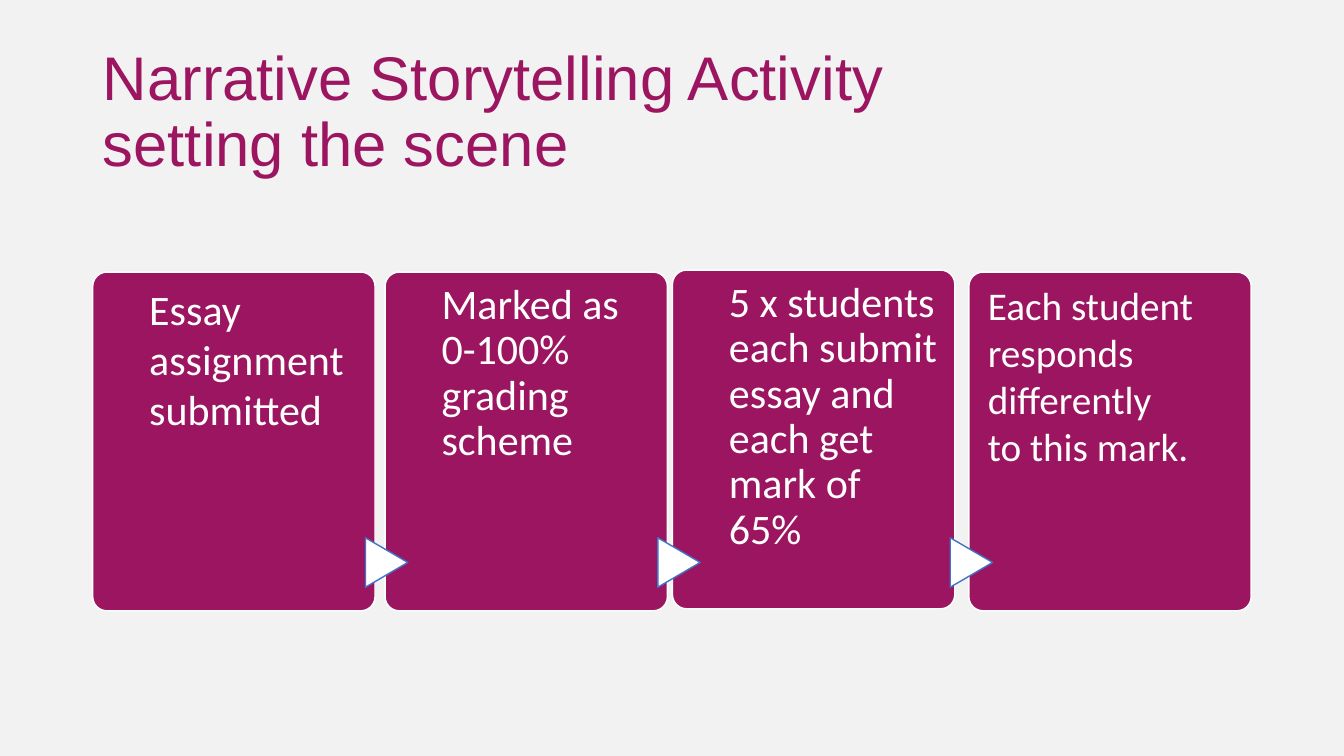
from pptx import Presentation
from pptx.dml.color import RGBColor
from pptx.enum.shapes import MSO_SHAPE as Shape
from pptx.enum.text import MSO_ANCHOR as Anchor, MSO_AUTO_SIZE as AutoSize, PP_ALIGN as Align
from pptx.util import Inches, Pt

PLUM, WHITE, PAPER, BLUE = "9C1560", "FFFFFF", "F2F2F2", "4472C4"
MARGIN = 0.92
CARD_WIDTH, CARD_HEIGHT = 2.8, 3.36
ARROW_LEFT, ARROW_TOP, ARROW_PITCH = 3.59, 5.37, 2.9
STEPS = [
    (0.92, 2.7, ["Essay", "assignment submitted"], 1.0),
    (3.82, 2.7, ["Marked as 0-100% grading scheme"], 0.9),
    (6.67, 2.68, ["5 x students each submit essay and each get mark of 65%"], 0.9),
]
RESPONSE = ["Each student", "responds", "differently", "to this mark."]


def color(value):
    return RGBColor.from_string(value)


def box(left, top, width, height):
    return [Inches(length) for length in (left, top, width, height)]


def write(frame, paragraphs, size, font="Calibri", fill=WHITE, spacing=1.0,
          anchor=Anchor.TOP, insets=(0.1, 0.05, 0.1, 0.05), wrap=True):
    frame.word_wrap = wrap
    frame.auto_size = AutoSize.NONE if wrap else AutoSize.SHAPE_TO_FIT_TEXT
    frame.vertical_anchor = anchor
    (frame.margin_left, frame.margin_top,
     frame.margin_right, frame.margin_bottom) = box(*insets)
    for index, words in enumerate(paragraphs):
        paragraph = frame.add_paragraph() if index else frame.paragraphs[0]
        paragraph.text = words
        paragraph.alignment = Align.LEFT
        paragraph.line_spacing = spacing
        for run in paragraph.runs:
            run.font.name = font
            run.font.size = Pt(size)
            run.font.color.rgb = color(fill)


def draw(slide, kind, area, fill, line):
    shape = slide.shapes.add_shape(kind, *box(*area))
    shape.shadow.inherit = False
    shape.fill.solid()
    shape.fill.fore_color.rgb = color(fill)
    shape.line.color.rgb = color(line)
    shape.line.width = Pt(1)
    return shape


def add_heading(slide, area):
    heading = slide.shapes.title
    heading.left, heading.top, heading.width, heading.height = box(*area)
    write(heading.text_frame, ["Narrative Storytelling Activity\nsetting the scene"],
          44, font="Arial", fill=PLUM, spacing=0.9, anchor=Anchor.MIDDLE)


def add_card(slide, left, top):
    card = draw(slide, Shape.ROUNDED_RECTANGLE,
                (left, top, CARD_WIDTH, CARD_HEIGHT), PLUM, WHITE)
    card.adjustments[0] = 0.05


def add_arrow(slide, left, top):
    arrow = draw(slide, Shape.FLOWCHART_EXTRACT, (left, top, 0.49, 0.42), WHITE, BLUE)
    arrow.rotation = 90


def add_step(slide, left, top, paragraphs, spacing):
    caption = slide.shapes.add_textbox(
        *box(left + CARD_WIDTH * 0.2, top, 2.09, CARD_HEIGHT))
    write(caption.text_frame, paragraphs, 30, spacing=spacing, insets=(0, 0.11, 0, 0))


def add_response(slide, left, top):
    response = slide.shapes.add_textbox(*box(left + 0.09, top + 0.04, 2.37, 1.99))
    write(response.text_frame, RESPONSE, 28, wrap=False)


def add_process(slide):
    for index, (left, top, paragraphs, spacing) in enumerate(STEPS):
        add_card(slide, left, top)
        if index:
            add_arrow(slide, ARROW_LEFT + (index - 1) * ARROW_PITCH, ARROW_TOP)
        add_step(slide, left, top, paragraphs, spacing)
    add_card(slide, 9.61, 2.7)
    add_arrow(slide, ARROW_LEFT + 2 * ARROW_PITCH, ARROW_TOP)
    add_response(slide, 9.61, 2.7)


def main():
    deck = Presentation()
    deck.slide_width, deck.slide_height = Inches(13.33), Inches(7.5)
    slide = deck.slides.add_slide(deck.slide_layouts[5])
    slide.background.fill.solid()
    slide.background.fill.fore_color.rgb = color(PAPER)
    add_heading(slide, (MARGIN, 0.4, 11.5, 1.45))
    add_process(slide)
    deck.save("out.pptx")


if __name__ == "__main__":
    main()
